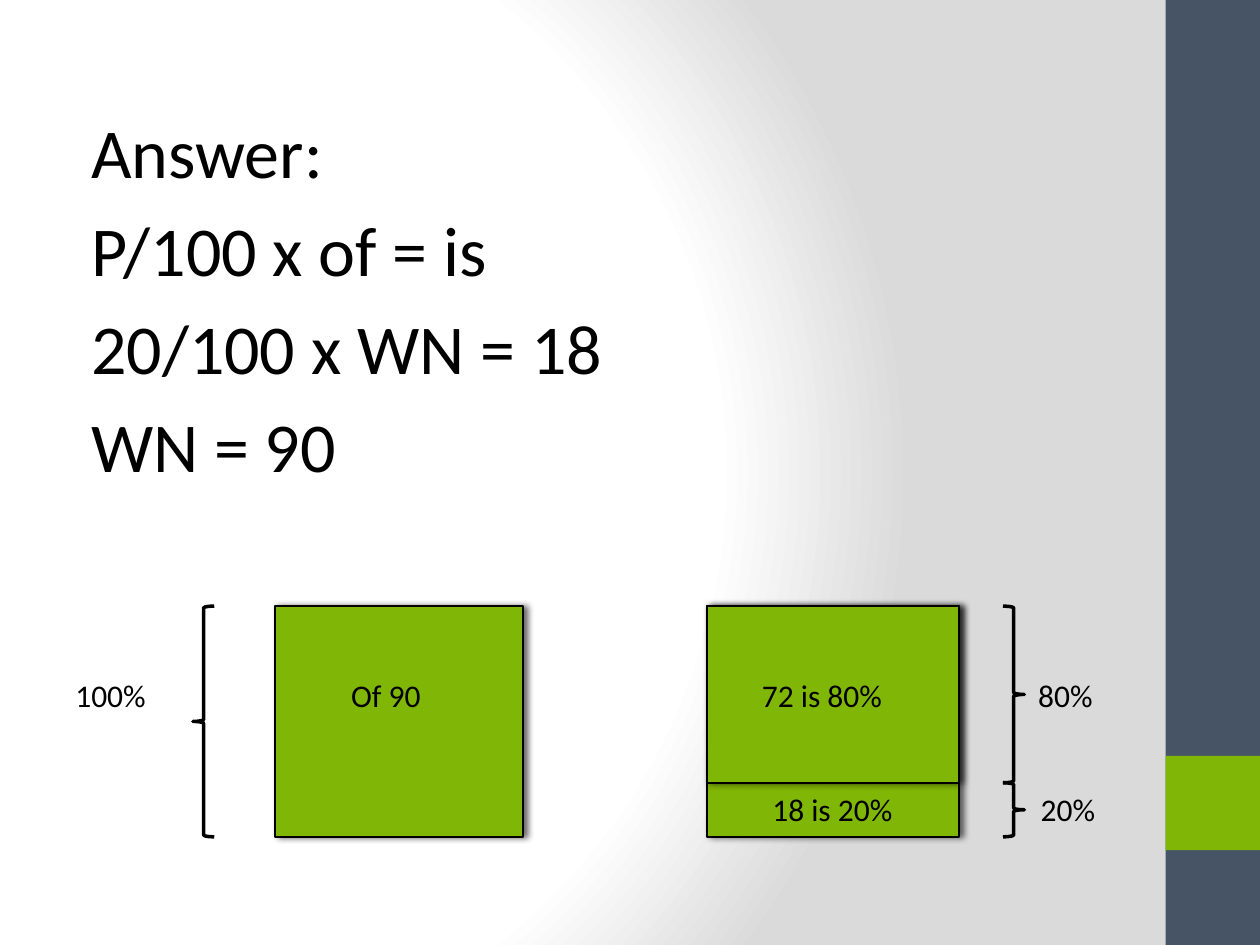
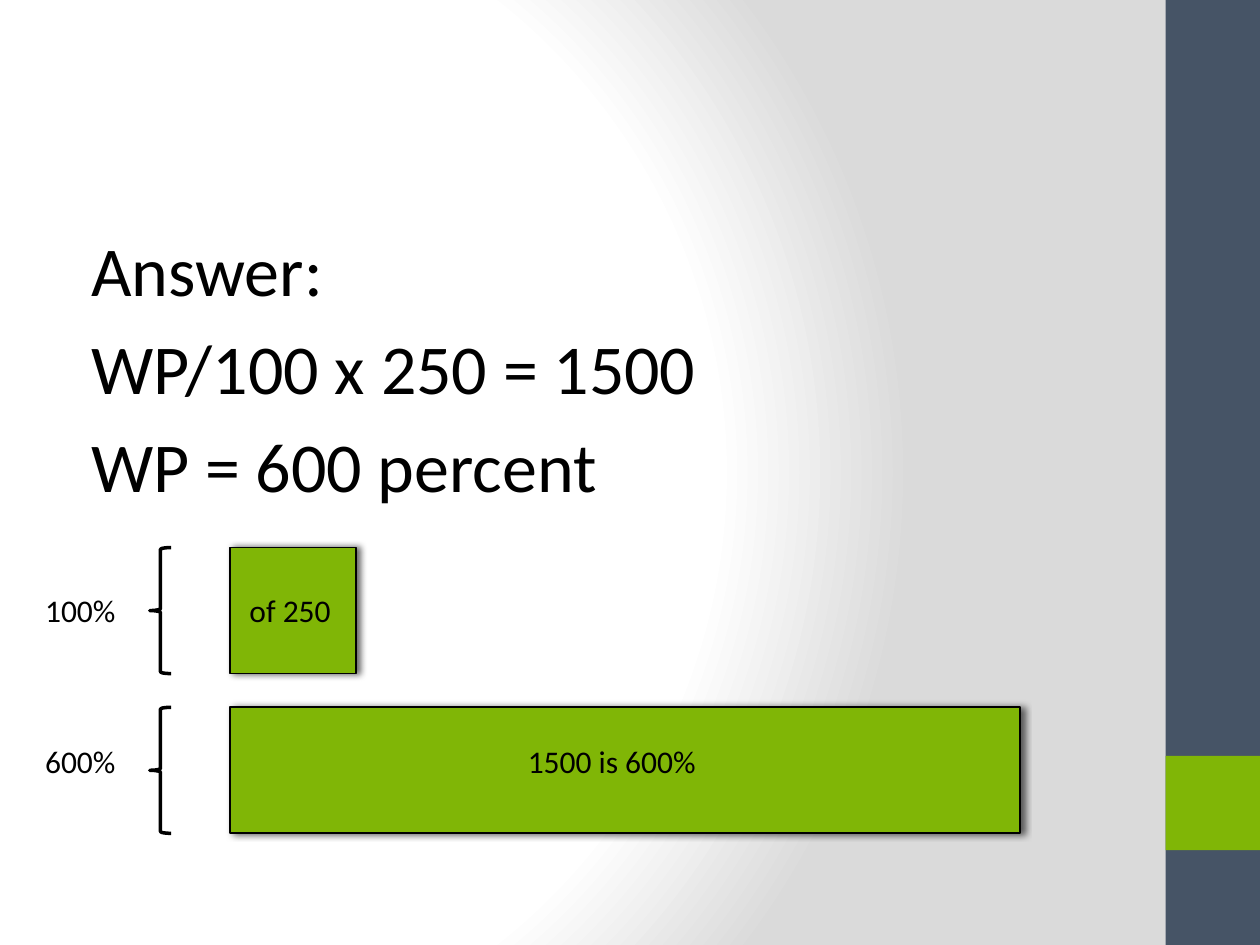
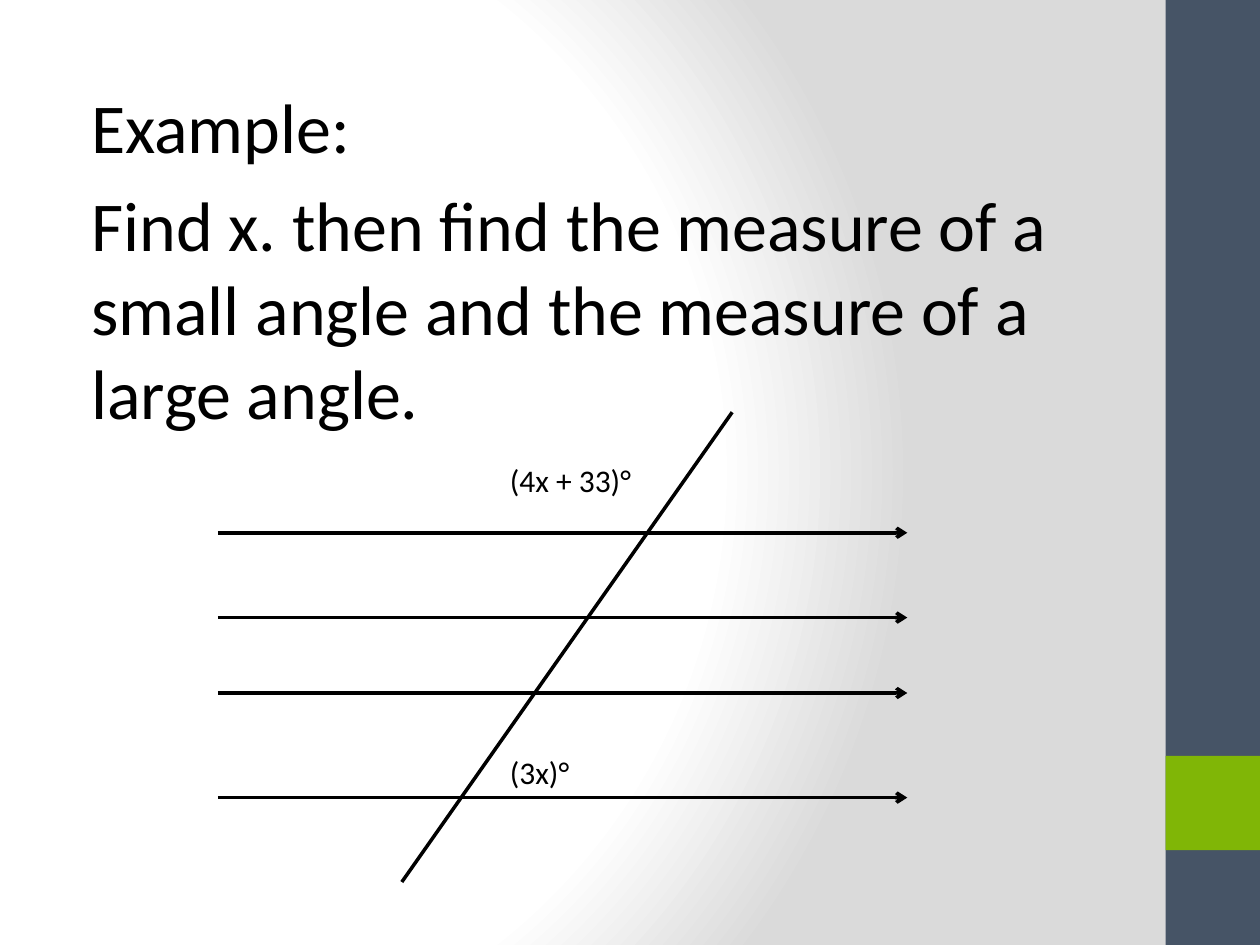
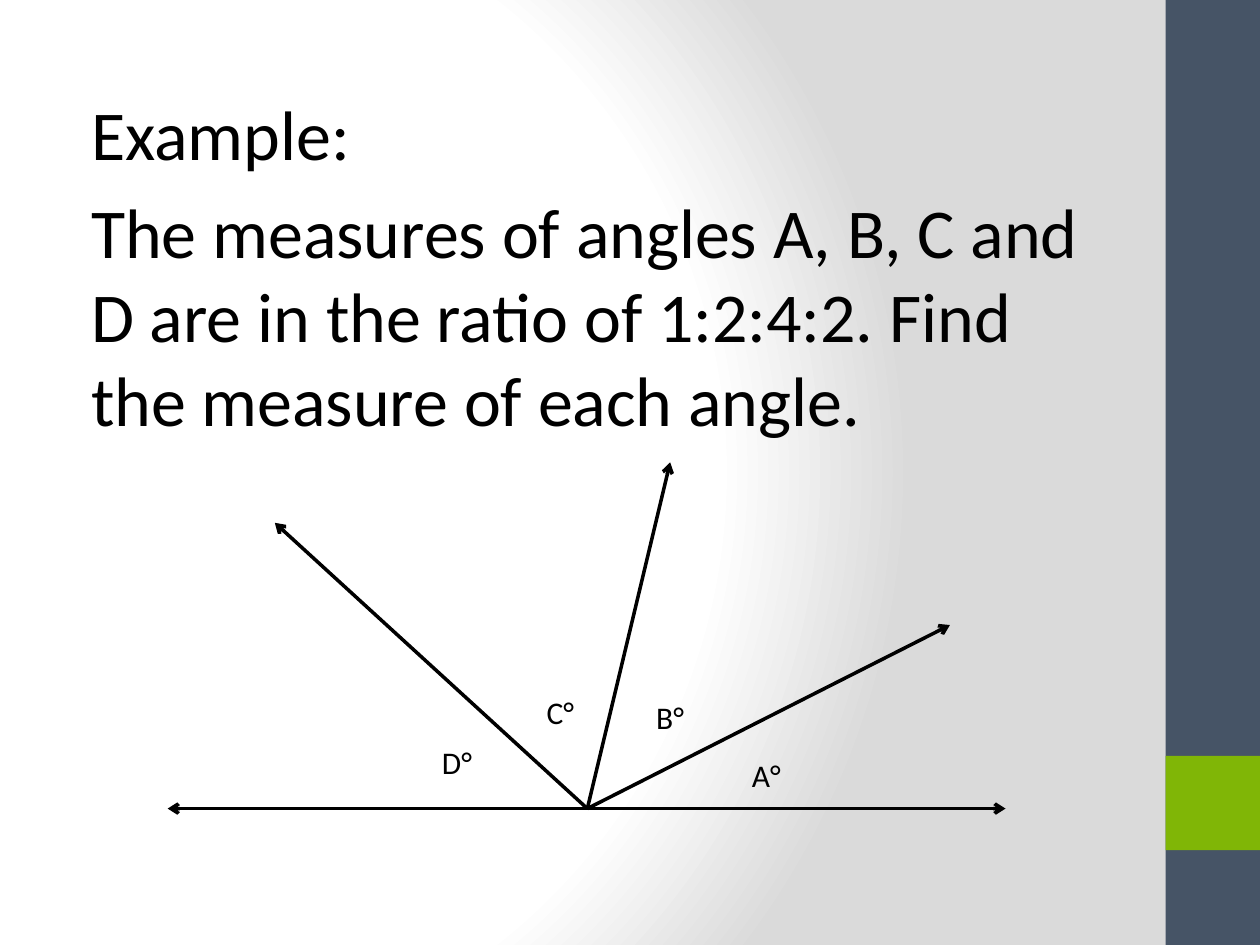
"""Build four maths slides on percentages, parallel lines and angle ratios."""
from dataclasses import dataclass

from lxml import etree
from pptx import Presentation
from pptx.dml.color import RGBColor
from pptx.enum import shapes, text
from pptx.oxml import parse_xml
from pptx.oxml.ns import nsdecls, qn
from pptx.util import Cm, Pt

BLACK = RGBColor(0x00, 0x00, 0x00)
GREEN = RGBColor(0x80, 0xB6, 0x06)
SLATE = RGBColor(0x46, 0x54, 0x66)
FONT = "Calibri"

PAGE_WIDTH, PAGE_HEIGHT = 25.4, 19.05
BAND_LEFT, BAND_WIDTH, SQUARE_TOP = 23.5, 1.9, 15.24
BODY_LEFT, BODY_WIDTH, BODY_BOTTOM = 1.27, 21.16, 17.78
BRACE_WIDTH, LABEL_HEIGHT = 0.43, 1.02

RECTANGLE = shapes.MSO_SHAPE.RECTANGLE
LEFT = shapes.MSO_SHAPE.LEFT_BRACE
RIGHT = shapes.MSO_SHAPE.RIGHT_BRACE

BACKDROP = f"""<a:gradFill {nsdecls("a")} rotWithShape="1"><a:gsLst>
<a:gs pos="0"><a:srgbClr val="FFFFFF"/></a:gs>
<a:gs pos="75000"><a:srgbClr val="FFFFFF"/></a:gs>
<a:gs pos="100000"><a:srgbClr val="DADADA"/></a:gs></a:gsLst>
<a:path path="circle"><a:fillToRect l="20000" t="50000" r="100000" b="50000"/></a:path>
</a:gradFill>"""
SHADOW = f"""<a:outerShdw {nsdecls("a")} blurRad="50800" dist="25400" dir="0" rotWithShape="0">
<a:srgbClr val="000000"><a:alpha val="60000"/></a:srgbClr></a:outerShdw>"""


@dataclass(frozen=True)
class Block:
    """A green bar with a shadow, in centimetres."""
    left: float
    top: float
    width: float
    height: float


@dataclass(frozen=True)
class Brace:
    """A brace that spans a bar."""
    kind: shapes.MSO_SHAPE
    left: float
    top: float
    height: float


@dataclass(frozen=True)
class Ray:
    """A line with optional arrowheads at its start and end."""
    start: tuple[float, float]
    end: tuple[float, float]
    head: bool = False
    tail: bool = True


@dataclass(frozen=True)
class Label:
    """A one-line caption."""
    left: float
    top: float
    width: float
    wording: str


@dataclass(frozen=True)
class Lesson:
    """The wording and the diagram of one slide."""
    body_top: float
    lines: tuple[str, ...]
    diagram: tuple[Block | Brace | Ray | Label, ...]


BAR_TOP, BAR_HEIGHT, UPPER_HEIGHT = 12.22, 4.65, 3.56
LOWER_TOP, LOWER_HEIGHT = BAR_TOP + UPPER_HEIGHT, BAR_HEIGHT - UPPER_HEIGHT
UPPER_TEXT, LOWER_TEXT = 13.51, 15.81
UNIT_TOP, MULTIPLE_TOP, UNIT = 11.04, 14.26, 2.54
UNIT_TEXT, MULTIPLE_TEXT = 11.79, 14.84
VERTEX = (11.84, 16.3)

LESSONS = (
    Lesson(2.06, ("Answer:", "P/100 x of = is", "20/100 x WN = 18", "WN = 90"), (
        Block(5.54, BAR_TOP, 5, BAR_HEIGHT),
        Block(14.25, BAR_TOP, 5.08, BAR_HEIGHT),
        Block(14.25, BAR_TOP, 5.08, UPPER_HEIGHT),
        Brace(LEFT, 3.89, BAR_TOP, BAR_HEIGHT),
        Brace(RIGHT, 20.22, BAR_TOP, UPPER_HEIGHT),
        Brace(RIGHT, 20.22, LOWER_TOP, LOWER_HEIGHT),
        Label(1.27, UPPER_TEXT, 1.93, "100%"),
        Label(6.83, UPPER_TEXT, 1.93, "Of 90"),
        Label(15.11, UPPER_TEXT, 2.95, "72 is 80%"),
        Label(20.68, UPPER_TEXT, 1.6, "80%"),
        Label(15.32, LOWER_TEXT, 2.95, "18 is 20%"),
        Label(20.73, LOWER_TEXT, 1.6, "20%"),
    )),
    Lesson(4.45, ("Answer:", "WP/100 x 250 = 1500", "WP = 600 percent"), (
        Block(4.64, UNIT_TOP, UNIT, UNIT),
        Block(4.64, MULTIPLE_TOP, 15.93, UNIT),
        Brace(LEFT, 3.02, UNIT_TOP, UNIT),
        Brace(LEFT, 3.02, MULTIPLE_TOP, UNIT),
        Label(0.66, UNIT_TEXT, 1.93, "100%"),
        Label(4.78, UNIT_TEXT, 2.18, "of 250"),
        Label(0.66, MULTIPLE_TEXT, 1.93, "600%"),
        Label(10.39, MULTIPLE_TEXT, 3.89, "1500 is 600%"),
    )),
    Lesson(1.56, ("Example:", "Find x. then find the measure of a small angle "
                  "and the measure of a large angle."), (
        *(Ray((4.39, level), (18.29, level)) for level in (10.74, 12.45, 13.97, 16.08)),
        Ray((8.1, 17.78), (14.76, 8.31), tail=False),
        Label(10.03, 9.17, 2.97, "(4x + 33)°"),
        Label(10.03, 15.06, 1.73, "(3x)°"),
    )),
    Lesson(1.71, ("Example:", "The measures of angles A, B, C and D are in the ratio "
                  "of 1:2:4:2. Find the measure of each angle."), (
        Ray((3.38, VERTEX[1]), (20.27, VERTEX[1]), head=True),
        *(Ray(VERTEX, tip) for tip in ((19.15, 12.6), (13.51, 9.32), (5.54, 10.54))),
        Label(8.66, 14.86, 1.12, "D°"),
        Label(10.77, 13.84, 1.07, "C°"),
        Label(12.98, 13.94, 1.07, "B°"),
        Label(14.91, 15.11, 1.09, "A°"),
    )),
)


def add_plain_shape(page, kind: shapes.MSO_SHAPE, left: float, top: float,
                    width: float, height: float, fill: RGBColor | None, line: float = 0):
    """Add a shape without a shadow, with an optional fill and black outline."""
    shape = page.shapes.add_shape(kind, Cm(left), Cm(top), Cm(width), Cm(height))
    shape.shadow.inherit = False
    if fill is None:
        shape.fill.background()
    else:
        shape.fill.solid()
        shape.fill.fore_color.rgb = fill
    if line:
        shape.line.color.rgb = BLACK
        shape.line.width = Pt(line)
    else:
        shape.line.fill.background()
    return shape


def add_text(page, left: float, top: float, width: float, height: float,
             lines: tuple[str, ...], size: float, wrap: bool):
    """Add a text box with one paragraph for each line."""
    box = page.shapes.add_textbox(Cm(left), Cm(top), Cm(width), Cm(height))
    frame = box.text_frame
    frame.word_wrap = wrap
    frame.vertical_anchor = text.MSO_ANCHOR.TOP
    for index, line in enumerate(lines):
        para = frame.add_paragraph() if index else frame.paragraphs[0]
        span = para.add_run()
        span.text = line
        span.font.name = FONT
        span.font.size = Pt(size)
        span.font.color.rgb = BLACK
    return box


def add_body(page, top: float, lines: tuple[str, ...]) -> None:
    """Add the large wording with its indent and spacing."""
    box = add_text(page, BODY_LEFT, top, BODY_WIDTH, BODY_BOTTOM - top, lines, 40, True)
    for para in box.text_frame.paragraphs:
        para.space_before = Pt(8)
        para._p.get_or_add_pPr().set("marL", str(Cm(0.32)))


def add_block(page, block: Block) -> None:
    """Draw a bar and its soft shadow."""
    shape = add_plain_shape(page, RECTANGLE, block.left, block.top,
                            block.width, block.height, GREEN, 1)
    shape.element.spPr.find(qn("a:effectLst")).append(parse_xml(SHADOW))


def add_brace(page, brace: Brace) -> None:
    """Draw a brace."""
    add_plain_shape(page, brace.kind, brace.left, brace.top,
                    BRACE_WIDTH, brace.height, None, 2)


def add_ray(page, ray: Ray) -> None:
    """Draw a line with its arrowheads."""
    line = page.shapes.add_connector(shapes.MSO_CONNECTOR.STRAIGHT,
                                     *(Cm(value) for value in ray.start + ray.end))
    line.line.color.rgb = BLACK
    line.line.width = Pt(2)
    outline = line.element.spPr.find(qn("a:ln"))
    for wanted, tag in ((ray.head, "a:headEnd"), (ray.tail, "a:tailEnd")):
        if wanted:
            etree.SubElement(outline, qn(tag), type="arrow")
    etree.SubElement(line.element.spPr, qn("a:effectLst"))


def add_label(page, label: Label) -> None:
    """Write a caption on one line in a box that grows with it."""
    box = add_text(page, label.left, label.top, label.width, LABEL_HEIGHT,
                   (label.wording,), 18, False)
    box.text_frame.auto_size = text.MSO_AUTO_SIZE.SHAPE_TO_FIT_TEXT


DRAW = {Block: add_block, Brace: add_brace, Ray: add_ray, Label: add_label}


def dress_master(deck, page) -> None:
    """Give the master its gradient and side bands, which are drawn on a page first."""
    master = deck.slide_master
    master.background.fill.gradient()
    gradient = next(master.element.iter(qn("a:gradFill")))
    gradient.getparent().replace(gradient, parse_xml(BACKDROP))
    bands = ((0, PAGE_HEIGHT, SLATE), (SQUARE_TOP, BAND_WIDTH, GREEN))
    for number, (top, height, colour) in enumerate(bands, start=101):
        band = add_plain_shape(page, RECTANGLE, BAND_LEFT, top, BAND_WIDTH, height, colour)
        band.element.nvSpPr.cNvPr.set("id", str(number))
        master.element.cSld.spTree.append(band.element)


def main() -> None:
    """Build and save the deck."""
    deck = Presentation()
    deck.slide_width, deck.slide_height = Cm(PAGE_WIDTH), Cm(PAGE_HEIGHT)
    pages = [deck.slides.add_slide(deck.slide_layouts[6]) for _ in LESSONS]
    dress_master(deck, pages[0])
    for page, lesson in zip(pages, LESSONS):
        add_body(page, lesson.body_top, lesson.lines)
        for item in lesson.diagram:
            DRAW[type(item)](page, item)
    deck.save("out.pptx")


if __name__ == "__main__":
    main()
